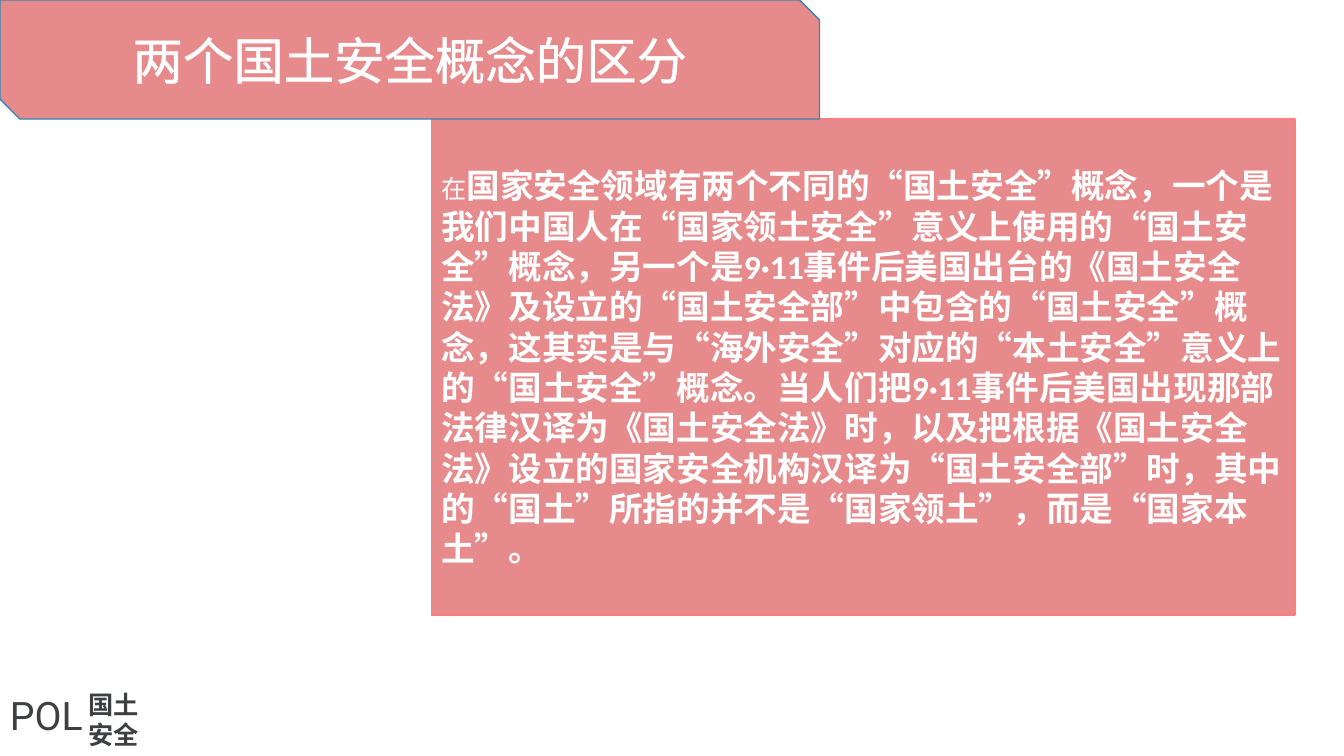
from lxml import etree
from pptx import Presentation
from pptx.dml.color import RGBColor
from pptx.enum.lang import MSO_LANGUAGE_ID as Language
from pptx.enum.shapes import MSO_SHAPE as Shape
from pptx.enum.text import MSO_ANCHOR as Anchor, MSO_AUTO_SIZE as AutoSize, PP_ALIGN as Align
from pptx.oxml.ns import qn
from pptx.util import Pt

PINK = RGBColor(0xE6, 0x8A, 0x8C)
CORAL = RGBColor(0xFF, 0x7C, 0x80)
BLUE = RGBColor(0x35, 0x87, 0xAB)
DARK = RGBColor(0x3D, 0x3F, 0x41)
WHITE = RGBColor(0xFF, 0xFF, 0xFF)

BODY = (
    "国家安全领域有两个不同的“国土安全”概念，一个是我们中国人在“国家领土安全”意义上使用的"
    "“国土安全”概念，另一个是9·11事件后美国出台的《国土安全法》及设立的“国土安全部”中包含的"
    "“国土安全”概念，这其实是与“海外安全”对应的“本土安全”意义上的“国土安全”概念。"
    "当人们把9·11事件后美国出现那部法律汉译为《国土安全法》时，以及把根据《国土安全法》设立的"
    "国家安全机构汉译为“国土安全部”时，其中的“国土”所指的并不是“国家领土”，而是“国家本土”。"
)


def format_run(run, name, size, color, bold=False):
    font = run.font
    font.name = name
    font.size = Pt(size)
    font.bold = bold
    font.color.rgb = color
    font.language_id = Language.SIMPLIFIED_CHINESE


def add_panel(kind, left, top, width, height, line_color):
    shape = slide.shapes.add_shape(kind, Pt(left), Pt(top), Pt(width), Pt(height))
    shape.shadow.inherit = False
    shape.fill.solid()
    shape.fill.fore_color.rgb = PINK
    shape.line.color.rgb = line_color
    shape.line.width = Pt(1)
    shape.text_frame.word_wrap = True
    shape.text_frame.vertical_anchor = Anchor.MIDDLE
    return shape


presentation = Presentation()
presentation.slide_width = Pt(960)
presentation.slide_height = Pt(540)
slide = presentation.slides.add_slide(presentation.slide_layouts[6])

# Footer label
for text, left, top, width, height, size, bold in (
    ("POL", 0, 490.3, 87.8, 41, 28, False),
    ("国土\n安全", 56.2, 488.9, 109.4, 51.1, 18, True),
):
    label = slide.shapes.add_textbox(Pt(left), Pt(top), Pt(width), Pt(height))
    label.text_frame.word_wrap = True
    label.text_frame.auto_size = AutoSize.SHAPE_TO_FIT_TEXT
    label.text_frame.text = text
    for paragraph in label.text_frame.paragraphs:
        format_run(paragraph.runs[0], "Roboto", size, DARK, bold)

# Explanation, with punctuation kept inside the margins
body = add_panel(Shape.RECTANGLE, 308.2, 85, 617, 354.2, CORAL)
paragraph = body.text_frame.paragraphs[0]
paragraph.alignment = Align.LEFT
paragraph._p.get_or_add_pPr().set("hangingPunct", "0")
for text, size, bold in (("在", 18, False), (BODY, 24, True)):
    run = paragraph.add_run()
    run.text = text
    format_run(run, "Calibri", size, WHITE, bold)

# Title banner
banner = add_panel(Shape.SNIP_2_DIAG_RECTANGLE, 0, 0, 585.4, 85, BLUE)
banner.text_frame.text = "两个国土安全概念的区分"
paragraph = banner.text_frame.paragraphs[0]
paragraph.alignment = Align.CENTER
title_run = paragraph.runs[0]
format_run(title_run, "Calibri", 36, WHITE)
outline = etree.Element(qn("a:ln"), w=str(Pt(1.45)))
outline_fill = etree.SubElement(outline, qn("a:solidFill"))
etree.SubElement(outline_fill, qn("a:srgbClr"), val=str(WHITE))
title_run._r.get_or_add_rPr().insert(0, outline)

presentation.save("out.pptx")
